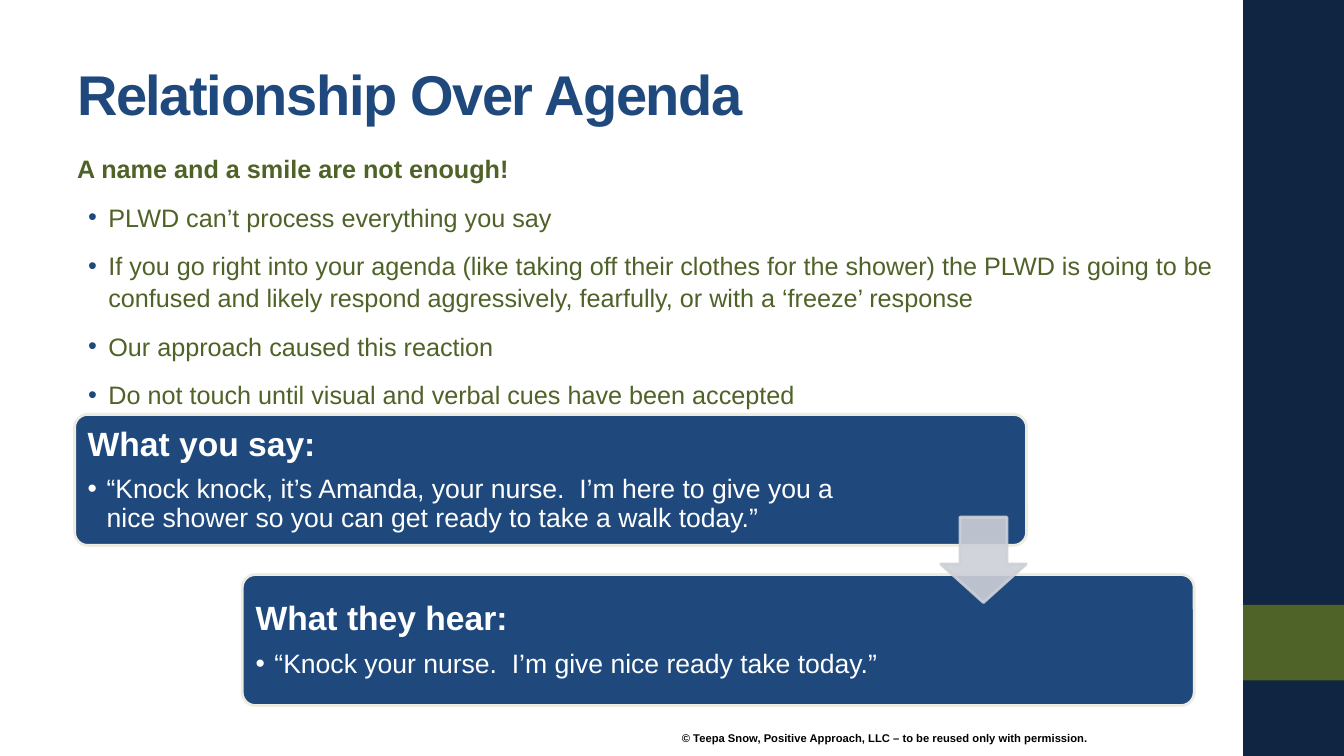
"""Build the slide on putting the relationship before the agenda."""
from dataclasses import dataclass

from lxml.etree import SubElement as Sub
from pptx import Presentation as Deck
from pptx.dml.color import RGBColor as Rgb
from pptx.enum.shapes import MSO_SHAPE as Kind
from pptx.enum.text import MSO_ANCHOR as Anchor, PP_ALIGN as Align
from pptx.oxml.ns import qn
from pptx.util import Pt

INK = {
    "navy": "0F2541",
    "blue": "1F497D",
    "green": "4F6228",
    "cream": "EEECE1",
    "grey": "CDD0D7",
    "white": "FFFFFF",
    "black": "000000",
}


@dataclass
class Box:
    left: float
    top: float
    width: float
    height: float


@dataclass
class Line:
    text: str
    size: float
    ink: str
    bold: bool = False
    dot: str = ""
    left: float = 0
    hang: float = 0
    before: float = 0
    after: float = 0
    pitch: float = 1


@dataclass
class Card:
    panel: Box
    words: Box
    head: str
    quote: str


def tint(name: str) -> Rgb:
    return Rgb.from_string(INK[name])


def fade(fill, share: int) -> None:
    for tone in fill.iter(qn("a:srgbClr")):
        Sub(tone, qn("a:alpha"), val=str(share * 1000))


def draw(slide, kind: Kind, box: Box, ink: str, edge: str = "",
         bends: tuple[float, ...] = ()):
    shape = slide.shapes.add_shape(
        kind, Pt(box.left), Pt(box.top), Pt(box.width), Pt(box.height))
    shape.shadow.inherit = False
    shape.fill.solid()
    shape.fill.fore_color.rgb = tint(ink)
    if edge:
        shape.line.color.rgb = tint(edge)
        shape.line.width = Pt(2)
    else:
        shape.line.fill.background()
    for i, bend in enumerate(bends):
        shape.adjustments[i] = bend
    return shape


def write(slide, box: Box, lines: list[Line], anchor: Anchor = Anchor.TOP,
          inset: float = 3.6):
    shape = slide.shapes.add_textbox(
        Pt(box.left), Pt(box.top), Pt(box.width), Pt(box.height))
    frame = shape.text_frame
    frame.word_wrap = True
    frame.vertical_anchor = anchor
    frame.margin_left = frame.margin_right = Pt(7.2)
    frame.margin_top = frame.margin_bottom = Pt(inset)
    for i, line in enumerate(lines):
        para = frame.add_paragraph() if i else frame.paragraphs[0]
        para.text = line.text
        para.alignment = Align.LEFT
        para.line_spacing = line.pitch
        para.space_before = Pt(line.before)
        para.space_after = Pt(line.after)
        if line.dot:
            props = para._p.get_or_add_pPr()
            props.set("marL", str(Pt(line.left)))
            props.set("indent", str(Pt(-line.hang)))
            Sub(Sub(props, qn("a:buClr")), qn("a:srgbClr"), val=INK[line.dot])
            Sub(props, qn("a:buFont"), typeface="Arial")
            Sub(props, qn("a:buChar"), char="•")
        font = para.font
        font.name = "Arial"
        font.size = Pt(line.size)
        font.bold = line.bold
        font.color.rgb = tint(line.ink)
    return shape


POINTS = [
    "PLWD can’t process everything you say",
    "If you go right into your agenda (like taking off their clothes for the "
    "shower) the PLWD is going to be confused and likely respond "
    "aggressively, fearfully, or with a ‘freeze’ response",
    "Our approach caused this reaction",
    "Do not touch until visual and verbal cues have been accepted",
]
CARDS = [
    Card(Box(53.3, 296, 680, 93.6), Box(55.6, 298.8, 583, 88.6),
         "What you say:",
         "“Knock knock, it’s Amanda, your nurse.  I’m here to give you a "
         "nice shower so you can get ready to take a walk today.”"),
    Card(Box(173, 410.4, 680, 93.6), Box(175.5, 413.3, 494, 88.6),
         "What they hear:",
         "“Knock your nurse.  I’m give nice ready take today.”"),
]


def main() -> None:
    deck = Deck()
    deck.slide_width, deck.slide_height = Pt(960), Pt(540)
    slide = deck.slides.add_slide(deck.slide_layouts[6])

    draw(slide, Kind.RECTANGLE, Box(888, 0, 72, 540), "navy")
    draw(slide, Kind.RECTANGLE, Box(888, 432, 72, 54), "green")
    write(slide, Box(480, 519, 448, 39), [Line(
        "© Teepa Snow, Positive Approach, LLC – to be reused only with "
        "permission.", 8, "black", True)])

    title = write(slide, Box(48, 21.6, 800, 90),
                  [Line("Relationship Over Agenda", 40, "blue", True)],
                  Anchor.MIDDLE)
    run = title.text_frame.paragraphs[0].runs[0]
    run._r.get_or_add_rPr().set("spc", "-100")

    lead = Line("A name and a smile are not enough!", 18, "green", True,
                pitch=1.05)
    write(slide, Box(48, 105, 838, 224.6), [lead] + [
        Line(point, 18, "green", dot="blue", left=22.3, hang=14.4,
             before=12, pitch=1.05) for point in POINTS])

    for card in CARDS:
        draw(slide, Kind.ROUNDED_RECTANGLE, card.panel, "blue", "cream", (0.1,))
        write(slide, card.words, [
            Line(card.head, 24, "white", True, after=9, pitch=0.9),
            Line(card.quote, 19, "white", dot="white", left=13.5, hang=13.5,
                 pitch=0.9),
        ], Anchor.MIDDLE, 7.2)

    arrow = draw(slide, Kind.DOWN_ARROW, Box(672, 369.4, 61, 61), "grey",
                 "grey", (0.55, 0.45))
    fade(arrow._element.spPr, 90)
    deck.save("out.pptx")


if __name__ == "__main__":
    main()
